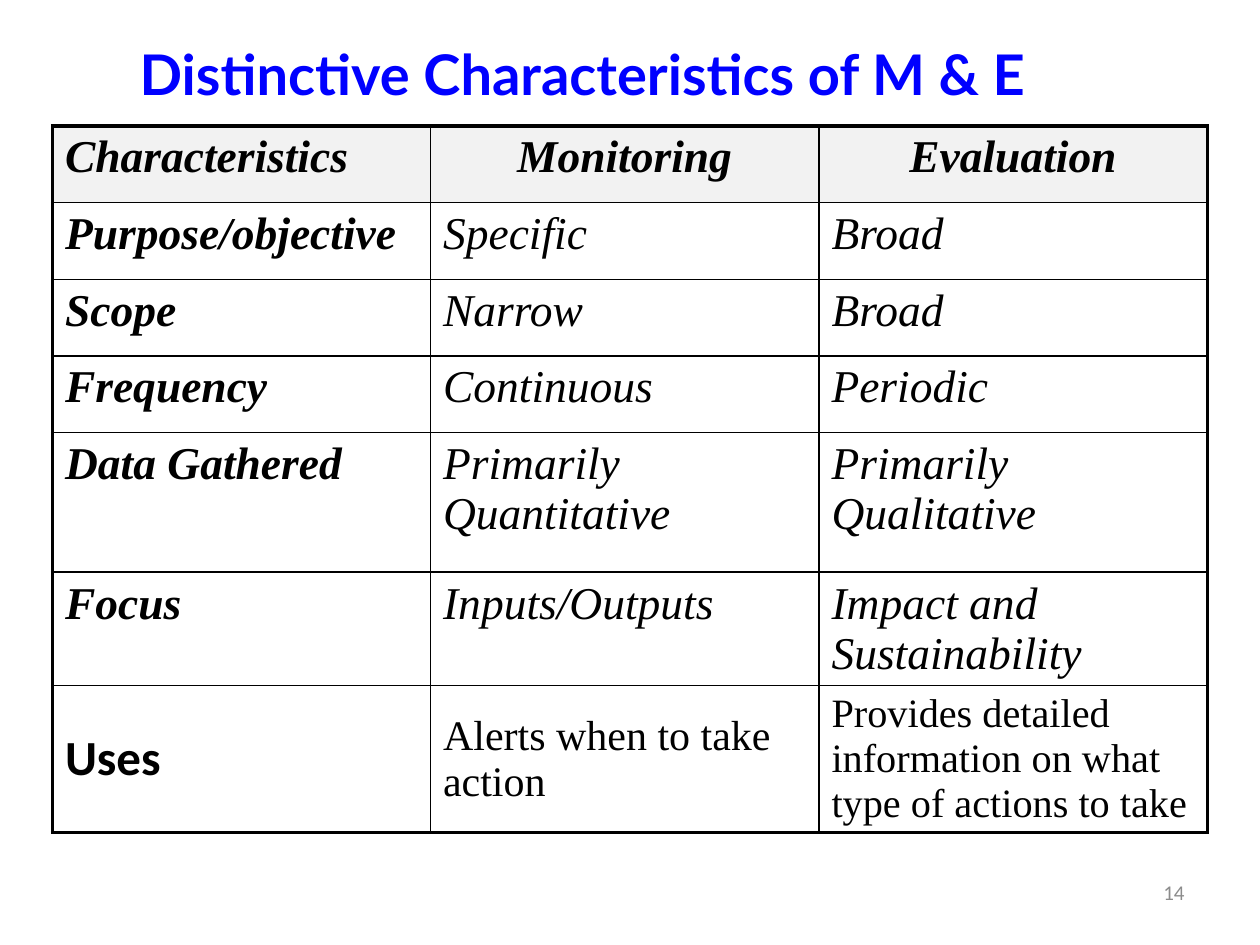
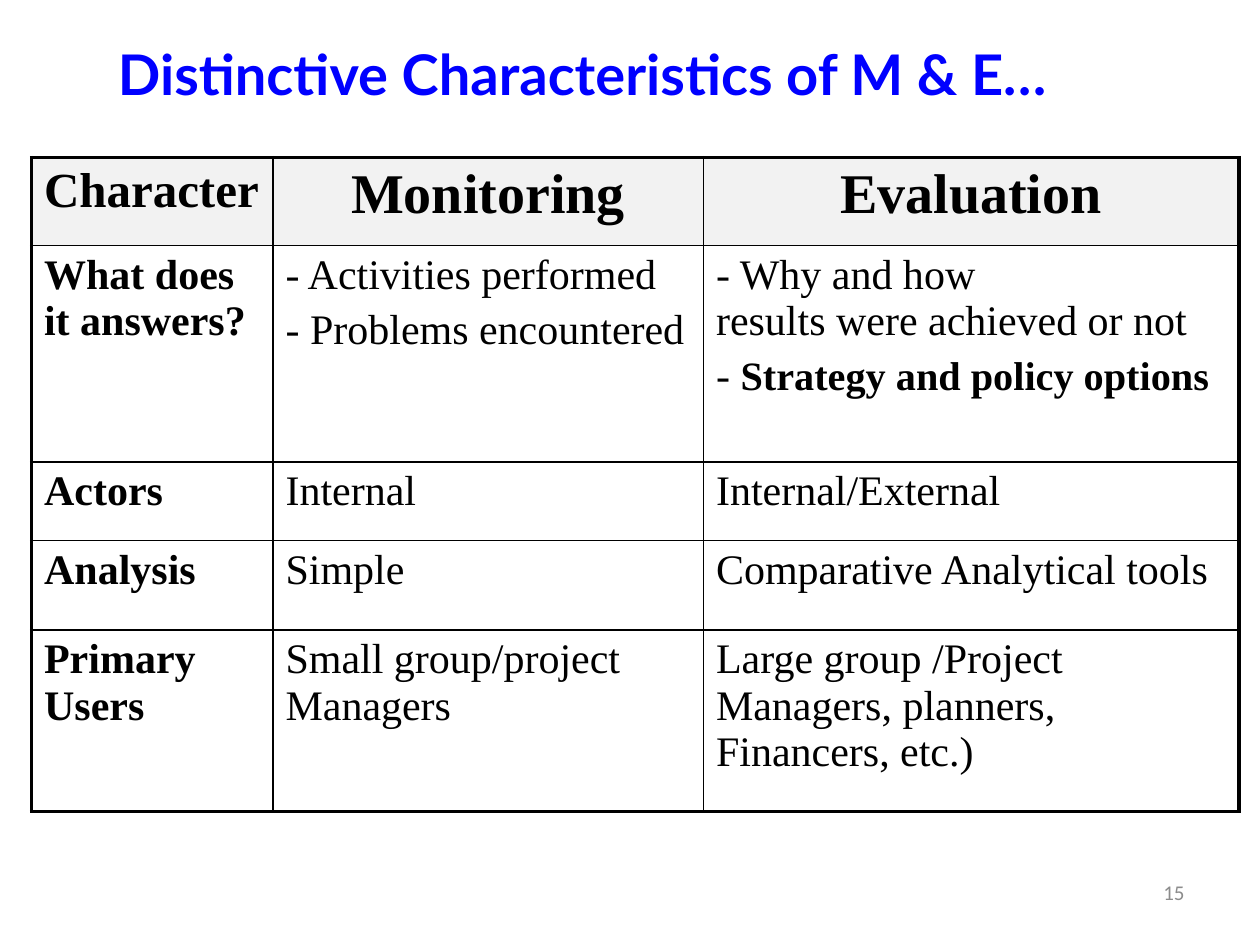
from lxml.etree import SubElement
from pptx import Presentation
from pptx.dml.color import RGBColor
from pptx.enum.text import MSO_ANCHOR as Anchor, PP_ALIGN as Align
from pptx.oxml.ns import qn
from pptx.util import Inches, Pt

BLUE, BLACK, GREY, HEADER_FILL = "0000FF", "000000", "8C8C8C", "F2F2F2"
TITLE_FONT, TABLE_FONT, PLAIN_FONT = "Lato", "Times New Roman", "Calibri"
OUTER_LINE, INNER_LINE = 2.25, 1
UNIT = Inches(10) / 120  # the slide is a grid of 120 columns by 90 rows


def style(span, font, size, color, bold=False, italic=False):
    span.font.name, span.font.size = font, Pt(size)
    span.font.bold, span.font.italic = bold, italic
    span.font.color.rgb = RGBColor.from_string(color)


def grid(*units):
    """Turn grid units into whole slide lengths."""
    return [round(UNIT * unit) for unit in units]


# Sizes, fonts and bold spans that differ from the table's rule are keyed by (row, column).
pages = [
    dict(
        number="14", title="Distinctive Characteristics of M & E",
        title_box=(0, 3, 111, 8), table_corner=(5, 12),
        columns=(36, 37, 37), rows=(7.3, 7.3, 7.3, 7.3, 13.3, 7.5, 13.5),
        size=26, italic=True, middle_row=6,
        sizes={(6, 0): 28, (6, 1): 24, (6, 2): 23},
        fonts={(6, 0): PLAIN_FONT}, bold_endings={},
        cells=[
            ("Characteristics", "Monitoring", "Evaluation"),
            ("Purpose/objective", "Specific", "Broad"),
            ("Scope", "Narrow", "Broad"),
            ("Frequency", "Continuous", "Periodic"),
            ("Data Gathered", "Primarily Quantitative", "Primarily Qualitative"),
            ("Focus", "Inputs/Outputs", "Impact and Sustainability"),
            ("Uses", "Alerts when to take action",
             "Provides detailed information on what type of actions to take"),
        ],
    ),
    dict(
        number="15", title="Distinctive Characteristics of M & E…",
        title_box=(2, 3, 107, 8), table_corner=(3, 15),
        columns=(23, 41, 51), rows=(8.4, 20.6, 7.5, 8.5, 17.3),
        size=24, italic=False, middle_row=None,
        sizes={(0, 0): 28, (0, 1): 32, (0, 2): 32}, fonts={},
        bold_endings={(1, 2): ("Strategy and policy options", 23)},
        cells=[
            ("Character", "Monitoring", "Evaluation"),
            ("What does it answers?",
             "- Activities performed\n- Problems encountered",
             "- Why and how\vresults were achieved or not\n- "),
            ("Actors", "Internal", "Internal/External"),
            ("Analysis", "Simple", "Comparative Analytical tools"),
            ("Primary Users", "Small group/project Managers",
             "Large group /Project Managers, planners, Financers, etc.)"),
        ],
    ),
]

deck = Presentation()
deck.slide_width, deck.slide_height = Inches(10), Inches(7.5)
title_only = deck.slide_layouts[5]

for page in pages:
    slide = deck.slides.add_slide(title_only)

    title = slide.shapes.title
    title.left, title.top, title.width, title.height = grid(*page["title_box"])
    title.text_frame.text = page["title"]
    title.text_frame.vertical_anchor = Anchor.MIDDLE
    title.text_frame.paragraphs[0].alignment = Align.CENTER
    style(title.text_frame.paragraphs[0].runs[0], TITLE_FONT, 32, BLUE, bold=True)

    row_count, column_count = len(page["rows"]), len(page["columns"])
    table = slide.shapes.add_table(
        row_count, column_count,
        *grid(*page["table_corner"], sum(page["columns"]), sum(page["rows"]))).table
    table.first_row = table.horz_banding = False
    for column, width in zip(table.columns, grid(*page["columns"])):
        column.width = width
    for row, height in zip(table.rows, grid(*page["rows"])):
        row.height = height

    for r, texts in enumerate(page["cells"]):
        for c, text in enumerate(texts):
            cell = table.cell(r, c)
            cell.text_frame.text = text
            if r == page["middle_row"]:
                cell.vertical_anchor = Anchor.MIDDLE

            font = page["fonts"].get((r, c), TABLE_FONT)
            size = page["sizes"].get((r, c), page["size"])
            italic = page["italic"] and r != page["middle_row"]
            for para in cell.text_frame.paragraphs:
                if r == 0 and c > 0:
                    para.alignment = Align.CENTER
                space_before = SubElement(para._p.get_or_add_pPr(), qn("a:spcBef"))
                SubElement(space_before, qn("a:spcPct"), val="20000")
                for span in para.runs:
                    style(span, font, size, BLACK, r == 0 or c == 0, italic)
            if (r, c) in page["bold_endings"]:
                ending, ending_size = page["bold_endings"][r, c]
                span = cell.text_frame.paragraphs[-1].add_run()
                span.text = ending
                style(span, font, ending_size, BLACK, bold=True)

            edges = {"a:lnL": c == 0, "a:lnR": c == column_count - 1,
                     "a:lnT": r == 0, "a:lnB": r == row_count - 1}
            properties = cell._tc.get_or_add_tcPr()
            for tag, is_outer in edges.items():
                width = Pt(OUTER_LINE if is_outer else INNER_LINE)
                line = SubElement(properties, qn(tag), w=str(width))
                fill = SubElement(line, qn("a:solidFill"))
                SubElement(fill, qn("a:srgbClr"), val=BLACK)
            if r == 0:
                cell.fill.solid()
                cell.fill.fore_color.rgb = RGBColor.from_string(HEADER_FILL)
            else:
                cell.fill.background()

    number_box = slide.shapes.add_textbox(*grid(86, 82, 28, 6))
    number_box.text_frame.word_wrap = True
    number_box.text_frame.vertical_anchor = Anchor.MIDDLE
    para = number_box.text_frame.paragraphs[0]
    para.text, para.alignment = page["number"], Align.RIGHT
    style(para.runs[0], PLAIN_FONT, 12, GREY)

deck.save("out.pptx")
